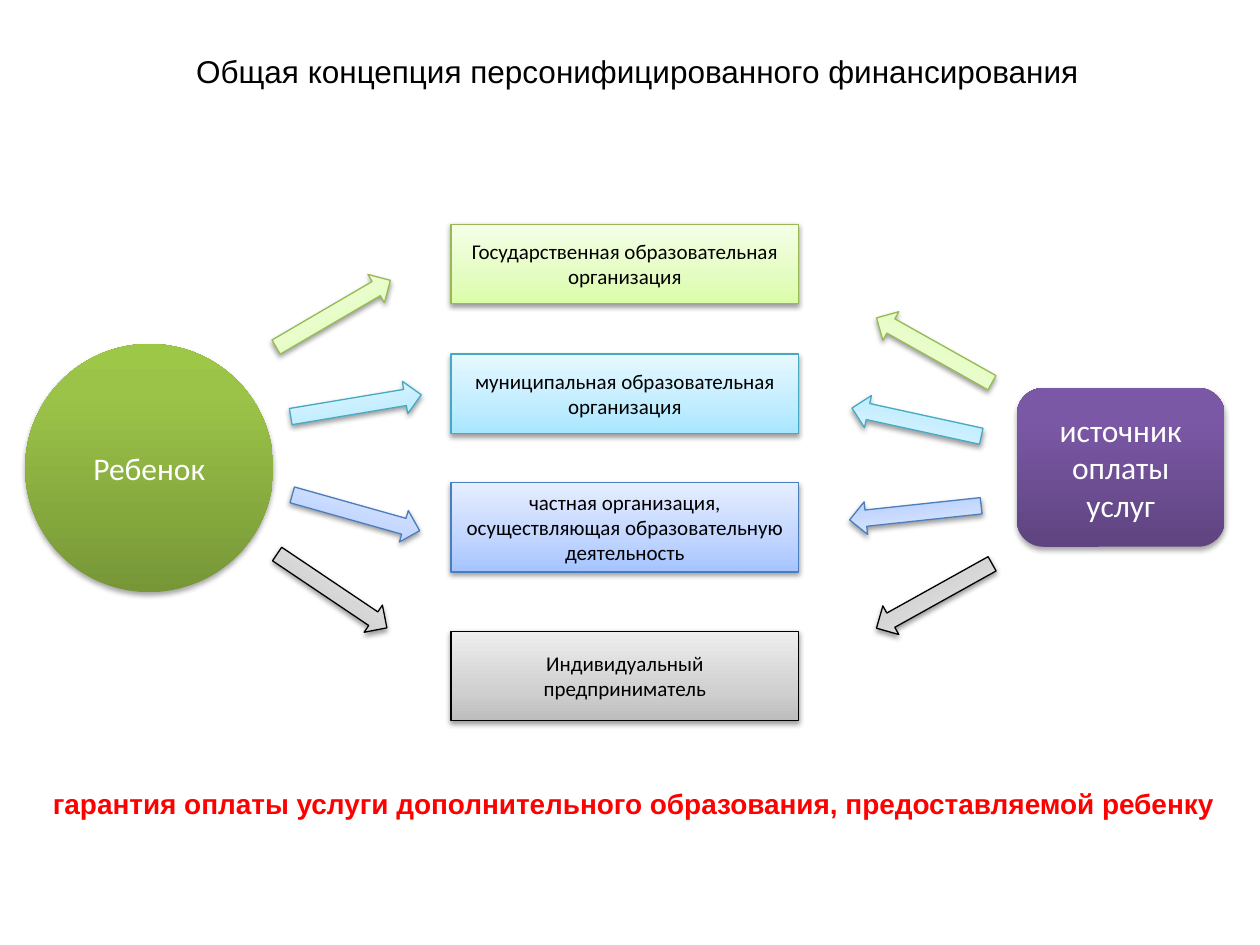
import copy
from dataclasses import dataclass

import pptx
import pptx.util
from lxml import etree
from pptx.dml.color import RGBColor
from pptx.enum.shapes import MSO_SHAPE
from pptx.enum.text import MSO_ANCHOR, MSO_AUTO_SIZE, PP_ALIGN
from pptx.oxml.ns import qn
from pptx.util import Inches


@dataclass(frozen=True)
class Finish:
    """Gradient stops, outline and shadow of a shape."""
    stops: tuple
    line: str = ""
    shadow_opacity: int = 38
    shadow_distance: float = 1.6


@dataclass(frozen=True)
class Theme:
    """Colours, fonts and type sizes of the slide."""
    state: Finish = Finish(((0, "DAFDA7"), (0.35, "E4FCC2"), (1, "F5FFE7")), "98B955")
    municipal: Finish = Finish(((0, "A7E6FF"), (0.35, "C1EDFF"), (1, "E7F8FF")), "46AAC5")
    private: Finish = Finish(((0, "A4C4FF"), (0.35, "BFD4FF"), (1, "E6EEFF")), "4B7EBC")
    entrepreneur: Finish = Finish(((0, "BDBDBD"), (0.35, "D1D1D1"), (1, "EEEEEE")), "000000")
    child: Finish = Finish(((0, "779737"), (0.8, "9BC348"), (1, "9DC746")), "", 35, 1.8)
    payer: Finish = Finish(((0, "5F4480"), (0.8, "7B58A6"), (1, "7C57A8")), "", 35, 1.8)
    dark: str = "000000"
    light: str = "FFFFFF"
    accent: str = "FF0000"
    heading_font: str = "Arial"
    body_font: str = "Calibri"
    large: int = 18
    medium: int = 16
    small: int = 12

    @property
    def providers(self):
        """Return the finishes of the four providers from top to bottom."""
        return self.state, self.municipal, self.private, self.entrepreneur


THEME = Theme()


def apply_format(target, values):
    """Set attributes of an object from a dict."""
    for name, value in values.items():
        setattr(target, name, value)


def write_text(shape, text, font, size, color, bold=False, anchor=MSO_ANCHOR.MIDDLE):
    """Write one centred paragraph into a shape."""
    frame = shape.text_frame
    apply_format(frame, {"word_wrap": True, "vertical_anchor": anchor, "text": text})
    paragraph = frame.paragraphs[0]
    paragraph.alignment = PP_ALIGN.CENTER
    run_font = paragraph.runs[0].font
    apply_format(run_font, {"name": font, "size": pptx.util.Pt(size), "bold": bold})
    run_font.color.rgb = RGBColor.from_string(color)


def add_shadow(shape, finish):
    """Give a shape a soft shadow falling straight down."""
    shape.shadow.inherit = False
    effects = shape._element.spPr.find(qn("a:effectLst"))
    shadow = etree.SubElement(effects, qn("a:outerShdw"), {
        "blurRad": str(pptx.util.Pt(3.1)),
        "dist": str(pptx.util.Pt(finish.shadow_distance)),
        "dir": "5400000", "rotWithShape": "0"})
    color = etree.SubElement(shadow, qn("a:srgbClr"), val=THEME.dark)
    etree.SubElement(color, qn("a:alpha"), val=str(finish.shadow_opacity * 1000))


def add_block(slide, kind, box, finish):
    """Add a preset shape with a three-stop gradient and a shadow."""
    shape = slide.shapes.add_shape(kind, *map(Inches, box))
    shape.fill.gradient()
    shape.fill.gradient_angle = 90
    stop_list = next(shape._element.spPr.iter(qn("a:gsLst")))
    stop_list.append(copy.deepcopy(stop_list[-1]))
    for stop, (position, color) in zip(shape.fill.gradient_stops, finish.stops):
        stop.position = position
        stop.color.rgb = RGBColor.from_string(color)
    if finish.line:
        shape.line.color.rgb = RGBColor.from_string(finish.line)
        shape.line.width = pptx.util.Pt(0.75)
    else:
        shape.line.fill.background()
    add_shadow(shape, finish)
    return shape


def add_title(slide, box, text):
    """Place and format the title placeholder."""
    title = slide.shapes.title
    apply_format(title, dict(zip(("left", "top", "width", "height"), map(Inches, box))))
    write_text(title, text, THEME.heading_font, THEME.large, THEME.dark, anchor=MSO_ANCHOR.TOP)
    title.text_frame.auto_size = MSO_AUTO_SIZE.NONE


def add_guarantee(slide, box, text):
    """Add the closing statement under the diagram."""
    statement = slide.shapes.add_textbox(*map(Inches, box))
    write_text(statement, text, THEME.heading_font, THEME.medium, THEME.accent, True, MSO_ANCHOR.TOP)
    statement.text_frame.auto_size = MSO_AUTO_SIZE.SHAPE_TO_FIT_TEXT


def add_party(slide, kind, box, text, finish):
    """Add one of the two parties at the sides."""
    party = add_block(slide, kind, box, finish)
    write_text(party, text, THEME.body_font, THEME.large, THEME.light)


def add_providers(slide, box, rows):
    """Stack the provider boxes; each row is text, offset and height."""
    left, top, width = box
    for (text, offset, height), finish in zip(rows, THEME.providers):
        provider = add_block(slide, MSO_SHAPE.RECTANGLE, (left, top + offset, width, height), finish)
        write_text(provider, text, THEME.body_font, THEME.small, THEME.dark)


def add_arrows(slide, origin, arrows):
    """Fan out one arrow per provider; each is x, y and rotation."""
    left, top = origin
    for (x, y, rotation), finish in zip(arrows, THEME.providers):
        box = (left + x, top + y, 1.05, 0.26)
        add_block(slide, MSO_SHAPE.RIGHT_ARROW, box, finish).rotation = rotation


def build_financing_slide(presentation):
    """Build the slide on the concept of personified financing."""
    slide = presentation.slides.add_slide(presentation.slide_layouts[5])
    add_title(slide, (1.18, 0.36, 7.76, 0.4), "Общая концепция персонифицированного финансирования")
    add_providers(slide, (3.58, 1.78, 2.76), (
        ("Государственная образовательная организация", 0, 0.63),
        ("муниципальная образовательная организация", 1.03, 0.63),
        ("частная организация, осуществляющая образовательную деятельность", 2.05, 0.71),
        ("Индивидуальный предприниматель", 3.23, 0.71)))
    add_party(slide, MSO_SHAPE.OVAL, (0.2, 2.73, 1.97, 1.97), "Ребенок", THEME.child)
    add_arrows(slide, (2.11, 2.36), (
        (0.01, 0, 329.7), (0.19, 0.73, 350.5), (0.19, 1.58, 15.7), (0, 2.2, 33.9)))
    add_party(slide, MSO_SHAPE.ROUNDED_RECTANGLE, (8.07, 3.08, 1.65, 1.26),
              "источник оплаты услуг", THEME.payer)
    add_arrows(slide, (6.74, 2.65), (
        (0.15, 0, 209.3), (0.01, 0.57, 192.3), (0, 1.29, 173.9), (0.15, 1.95, 150.9)))
    add_guarantee(slide, (0.1, 6.19, 9.86, 0.37),
                  "гарантия оплаты услуги дополнительного образования, предоставляемой ребенку")


def main():
    """Create and save the presentation."""
    presentation = pptx.Presentation()
    apply_format(presentation, {"slide_width": Inches(10), "slide_height": Inches(7.5)})
    build_financing_slide(presentation)
    presentation.save("out.pptx")


if __name__ == "__main__":
    main()
